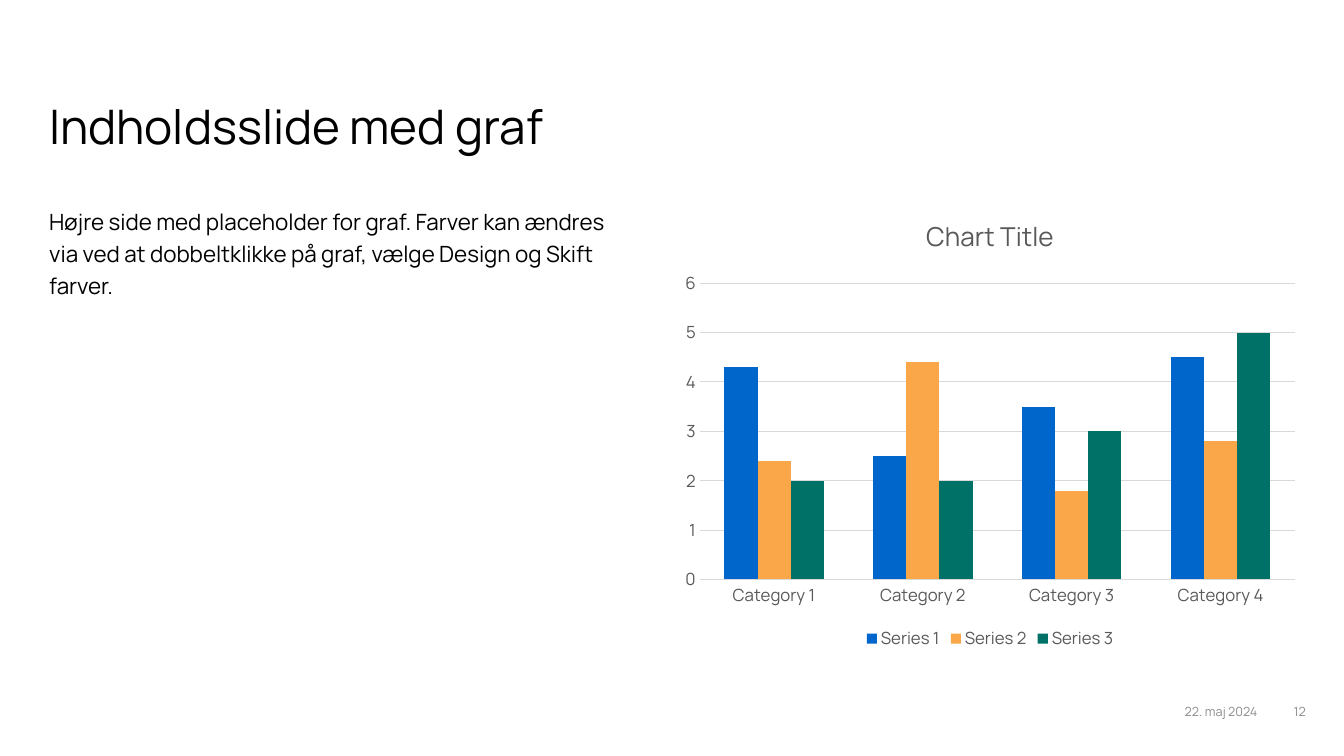
from dataclasses import dataclass

from pptx import Presentation
from pptx.chart.data import CategoryChartData
from pptx.dml.color import RGBColor
from pptx.enum.chart import XL_CHART_TYPE, XL_LEGEND_POSITION, XL_TICK_MARK
from pptx.enum.text import MSO_ANCHOR, PP_ALIGN
from pptx.util import Inches, Pt


@dataclass(frozen=True)
class Theme:
    """Hold the colours, typeface and type sizes."""
    face: str = "Manrope"
    ink: str = "000000"
    label: str = "595959"
    faint: str = "8C8C8C"
    grid: str = "D9D9D9"
    bars: tuple = ("0066CC", "FAA749", "007167")
    title: float = 34
    body: float = 16
    head: float = 18.6
    axis: float = 12
    foot: float = 9


THEME = Theme()
CATS = [f"Category {n}" for n in range(1, 5)]
DATA = {
    "Series 1": (4.3, 2.5, 3.5, 4.5),
    "Series 2": (2.4, 4.4, 1.8, 2.8),
    "Series 3": (2, 2, 3, 5),
}


def apply(target, values):
    """Set each named value on the target."""
    for name, value in values.items():
        setattr(target, name, value)


def style(font, size, color):
    """Give a font the theme face, a size and a colour."""
    apply(font, {"name": THEME.face, "size": Pt(size), "bold": False})
    font.color.rgb = RGBColor.from_string(color)


def write(slide, box, text, size, color, frame=None, para=None):
    """Place one paragraph of text in a box."""
    area = slide.shapes.add_textbox(*map(Inches, box)).text_frame
    apply(area, {"word_wrap": True, **(frame or {})})
    line = area.paragraphs[0]
    apply(line, {"text": text, **(para or {})})
    style(line.runs[0].font, size, color)


def rule(line):
    """Draw a line in the grid colour."""
    line.color.rgb = RGBColor.from_string(THEME.grid)
    line.width = Pt(0.75)


def graph(slide, box):
    """Place the column chart in a box."""
    data = CategoryChartData()
    data.categories = CATS
    for name, values in DATA.items():
        data.add_series(name, values)
    chart = slide.shapes.add_chart(
        XL_CHART_TYPE.COLUMN_CLUSTERED, *map(Inches, box), data).chart
    style(chart.font, THEME.axis, THEME.label)
    apply(chart, {"has_title": True, "has_legend": True})
    head = chart.chart_title.text_frame
    head.text = "Chart Title"
    style(head.paragraphs[0].runs[0].font, THEME.head, THEME.label)
    apply(chart.legend, {"position": XL_LEGEND_POSITION.BOTTOM,
                         "include_in_layout": False})
    style(chart.legend.font, THEME.axis, THEME.label)
    axes = {
        chart.category_axis: {"has_major_gridlines": False},
        chart.value_axis: {"has_major_gridlines": True, "minimum_scale": 0,
                           "maximum_scale": 6, "major_unit": 1},
    }
    for axis, values in axes.items():
        apply(axis, {"major_tick_mark": XL_TICK_MARK.NONE,
                     "minor_tick_mark": XL_TICK_MARK.NONE, **values})
        style(axis.tick_labels.font, THEME.axis, THEME.label)
    rule(chart.category_axis.format.line)
    rule(chart.value_axis.major_gridlines.format.line)
    chart.value_axis.format.line.fill.background()
    plot = chart.plots[0]
    apply(plot, {"gap_width": 150, "overlap": 0, "vary_by_categories": False})
    for series, color in zip(plot.series, THEME.bars):
        series.format.fill.solid()
        series.format.fill.fore_color.rgb = RGBColor.from_string(color)


def footer(slide, box):
    """Place the date and page number at the right of a box."""
    left, top, width, height = box
    page = 0.46
    parts = (("22. maj 2024", left, width - page - 0.02, 0.1),
             ("12", left + width - page, page, 0))
    for text, start, span, inset in parts:
        write(slide, (start, top, span, height), text, THEME.foot, THEME.faint,
              {"vertical_anchor": MSO_ANCHOR.MIDDLE,
               "margin_left": Inches(inset)},
              {"alignment": PP_ALIGN.RIGHT})


def content(slide, box):
    """Place the title, body text and chart in a box."""
    left, top, width, height = box
    write(slide, (left, top, width, 1.22), "Indholdsslide med graf",
          THEME.title, THEME.ink, {"vertical_anchor": MSO_ANCHOR.BOTTOM},
          {"line_spacing": 0.9})
    write(slide, (left, top + 1.6, 5.96, height - 1.6),
          "Højre side med placeholder for graf. Farver kan ændres via ved at "
          "dobbeltklikke på graf, vælge Design og Skift farver.",
          THEME.body, THEME.ink, para={"line_spacing": 1.2})
    graph(slide, (left + 6.28, top + 1.58, 6.3, 4.55))


def main():
    """Build and save the slide."""
    deck = Presentation()
    apply(deck, {"slide_width": Inches(13.33), "slide_height": Inches(7.5)})
    slide = deck.slides.add_slide(deck.slide_layouts[6])
    content(slide, (0.39, 0.36, 12.6, 6.15))
    footer(slide, (11.31, 6.86, 1.74, 0.4))
    deck.save("out.pptx")


if __name__ == "__main__":
    main()
